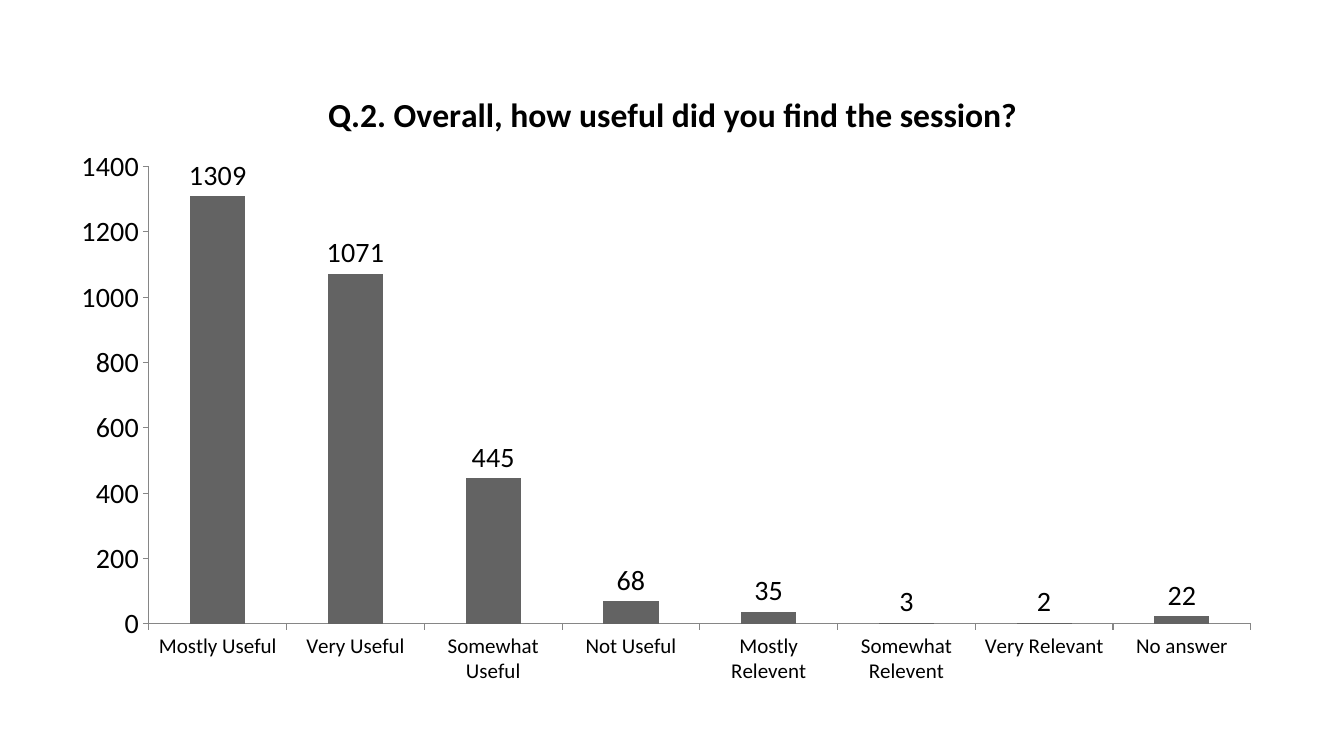
from lxml.etree import SubElement
from pptx import Presentation
from pptx.chart.data import CategoryChartData
from pptx.dml.color import RGBColor
from pptx.enum.chart import XL_CHART_TYPE, XL_LABEL_POSITION, XL_TICK_MARK
from pptx.oxml.ns import qn
from pptx.util import Inches, Pt

QUESTION = "Q.2. Overall, how useful did you find the session?"
ANSWERS = {
    "Mostly Useful": 1309,
    "Very Useful": 1071,
    "Somewhat Useful": 445,
    "Not Useful": 68,
    "Mostly Relevent": 35,
    "Somewhat Relevent": 3,
    "Very Relevant": 2,
    "No answer": 22,
}
FONT = "Calibri"
TEXT_COLOR = "000000"
BAR_COLOR = "636363"
AXIS_COLOR = "868686"


def color(hex_string):
    return RGBColor.from_string(hex_string)


def format_font(font, size, bold=False):
    font.name = FONT
    font.size = Pt(size)
    font.bold = bold
    font.color.rgb = color(TEXT_COLOR)


def set_layout(element, **fractions):
    """Place a chart part by fractions of the chart's width and height."""
    layout = element.find(qn("c:layout"))
    if layout is None:
        layout = SubElement(element, qn("c:layout"))
        # The layout comes first in a plot area and after the text in a title.
        position = 1 if element.tag == qn("c:title") else 0
        element.insert(position, layout)
    manual = SubElement(layout, qn("c:manualLayout"))
    if "w" in fractions:
        SubElement(manual, qn("c:layoutTarget")).set("val", "inner")
    for side in ("x", "y"):
        SubElement(manual, qn(f"c:{side}Mode")).set("val", "edge")
    for side, fraction in fractions.items():
        SubElement(manual, qn(f"c:{side}")).set("val", str(fraction))


def format_axis(axis, size):
    axis.has_major_gridlines = False
    axis.major_tick_mark = XL_TICK_MARK.OUTSIDE
    axis.minor_tick_mark = XL_TICK_MARK.NONE
    axis.format.line.color.rgb = color(AXIS_COLOR)
    axis.format.line.width = Pt(0.75)
    format_font(axis.tick_labels.font, size)


def add_answer_chart(slide):
    data = CategoryChartData()
    data.categories = list(ANSWERS)
    data.add_series(QUESTION, list(ANSWERS.values()))
    chart = slide.shapes.add_chart(
        XL_CHART_TYPE.COLUMN_CLUSTERED,
        Inches(0.57), Inches(0.57), Inches(12.09), Inches(6.34), data,
    ).chart
    format_font(chart.font, 20)
    chart.has_legend = False

    chart.has_title = True
    run = chart.chart_title.text_frame.paragraphs[0].add_run()
    run.text = QUESTION
    format_font(run.font, 24, bold=True)
    chart.chart_title.include_in_layout = False

    format_axis(chart.category_axis, 15)
    format_axis(chart.value_axis, 20)
    chart.value_axis.minimum_scale = 0
    chart.value_axis.maximum_scale = 1400
    chart.value_axis.major_unit = 200

    plot = chart.plots[0]
    plot.gap_width = 150
    plot.vary_by_categories = False
    plot.has_data_labels = True
    plot.data_labels.show_value = True
    plot.data_labels.position = XL_LABEL_POSITION.OUTSIDE_END
    format_font(plot.data_labels.font, 20)
    bars = plot.series[0].format.fill
    bars.solid()
    bars.fore_color.rgb = color(BAR_COLOR)

    plot_area = chart.element.find(f".//{qn('c:plotArea')}")
    set_layout(plot_area, x=0.075, y=0.171, w=0.904, h=0.715)
    title = chart.element.find(f".//{qn('c:title')}")
    set_layout(title, x=0.217, y=0.045)


def main():
    presentation = Presentation()
    presentation.slide_width = Inches(13.33)
    presentation.slide_height = Inches(7.5)
    slide = presentation.slides.add_slide(presentation.slide_layouts[6])
    add_answer_chart(slide)
    presentation.save("out.pptx")


if __name__ == "__main__":
    main()
